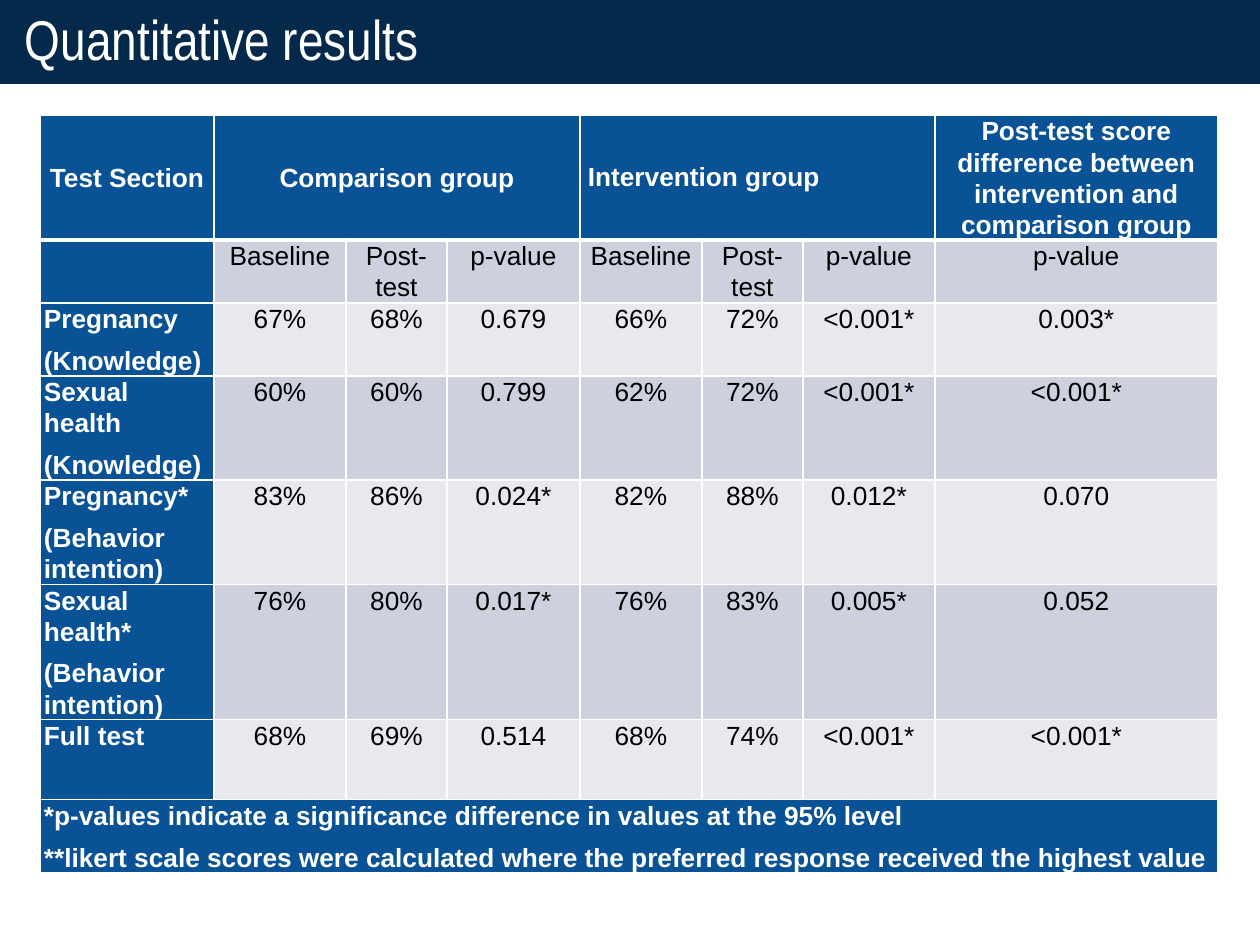
import lxml.etree
import pptx
import pptx.dml.color
import pptx.enum.shapes
import pptx.enum.text
import pptx.oxml.ns
import pptx.util

RGBColor = pptx.dml.color.RGBColor
PP_ALIGN = pptx.enum.text.PP_ALIGN
MSO_ANCHOR = pptx.enum.text.MSO_ANCHOR

NAVY = RGBColor(0x04, 0x29, 0x4A)
BLUE = RGBColor(0x08, 0x52, 0x95)
DARK_BAND = RGBColor(0xCC, 0xD1, 0xDD)
LIGHT_BAND = RGBColor(0xE7, 0xE9, 0xEF)
WHITE = RGBColor(0xFF, 0xFF, 0xFF)
BLACK = RGBColor(0x00, 0x00, 0x00)

TITLE = "Quantitative results"
# Header entries: first column, columns spanned, text
HEADERS = [
    (0, 1, "Test Section"),
    (1, 3, "Comparison group"),
    (4, 3, "Intervention group"),
    (7, 1, "Post-test score difference between intervention and comparison group"),
]
# Row label paragraphs, then one value per column
ROWS = [
    ([], ["Baseline", "Post-test", "p-value", "Baseline", "Post-test", "p-value", "p-value"]),
    (["Pregnancy", "(Knowledge)"],
     ["67%", "68%", "0.679", "66%", "72%", "<0.001*", "0.003*"]),
    (["Sexual health", "(Knowledge)"],
     ["60%", "60%", "0.799", "62%", "72%", "<0.001*", "<0.001*"]),
    (["Pregnancy*", "(Behavior intention)"],
     ["83%", "86%", "0.024*", "82%", "88%", "0.012*", "0.070"]),
    (["Sexual health*", "(Behavior intention)"],
     ["76%", "80%", "0.017*", "76%", "83%", "0.005*", "0.052"]),
    (["Full test"],
     ["68%", "69%", "0.514", "68%", "74%", "<0.001*", "<0.001*"]),
]
NOTES = [
    "*p-values indicate a significance difference in values at the 95% level",
    "**likert scale scores were calculated where the preferred response received the highest value",
]

EMU_PER_PX = 914400 / 126
SLIDE_W, SLIDE_H = 1260, 945
TITLE_H = 84
TABLE_LEFT, TABLE_TOP = 40, 115
COL_WIDTHS = [174, 132, 101, 133, 122, 101, 132, 283]
ROW_HEIGHTS = [125, 63, 73, 104, 104, 135, 80, 73]


def px(n):
    return pptx.util.Emu(round(n * EMU_PER_PX))


def add_run(p, text, size, font, color, bold=False):
    r = p.add_run()
    r.text = text
    r.font.size = pptx.util.Pt(size)
    r.font.name = font
    r.font.bold = bold
    r.font.color.rgb = color


def set_borders(cell, top, bottom):
    """Give a cell white borders; top and bottom are widths in points."""
    tc_pr = cell._tc.get_or_add_tcPr()
    sides = [("lnL", 1), ("lnR", 1), ("lnT", top), ("lnB", bottom)]
    for i, (side, width) in enumerate(sides):
        ln = lxml.etree.Element(pptx.oxml.ns.qn(f"a:{side}"), w=str(pptx.util.Pt(width)))
        fill = lxml.etree.SubElement(ln, pptx.oxml.ns.qn("a:solidFill"))
        lxml.etree.SubElement(fill, pptx.oxml.ns.qn("a:srgbClr"), val=str(WHITE))
        tc_pr.insert(i, ln)


def write_cell(cell, paragraphs, color, bold, align, spaced=True):
    tf = cell.text_frame
    for i, text in enumerate(paragraphs):
        p = tf.add_paragraph() if i else tf.paragraphs[0]
        p.alignment = align
        if spaced:
            p.line_spacing = 1.07
            p.space_before = p.space_after = pptx.util.Pt(3)
        add_run(p, text, 15, "Arial", color, bold)


def add_title(slide):
    sp = slide.shapes.add_shape(
        pptx.enum.shapes.MSO_SHAPE.RECTANGLE, 0, 0, px(SLIDE_W), px(TITLE_H))
    sp.shadow.inherit = False
    sp.fill.solid()
    sp.fill.fore_color.rgb = NAVY
    sp.line.fill.background()
    tf = sp.text_frame
    tf.word_wrap = True
    tf.vertical_anchor = MSO_ANCHOR.MIDDLE
    tf.margin_left = tf.margin_right = px(25)
    tf.margin_top = tf.margin_bottom = px(13)
    p = tf.paragraphs[0]
    p.alignment = PP_ALIGN.LEFT
    p.line_spacing = 0.9
    add_run(p, TITLE, 32, "Arial Narrow", WHITE)


def style_cell(cell, row, col):
    last = len(ROW_HEIGHTS) - 1
    cell.margin_left = cell.margin_right = px(4 if col < 2 else 8)
    cell.margin_top = cell.margin_bottom = 0
    cell.fill.solid()
    if row in (0, last) or col == 0:
        cell.fill.fore_color.rgb = BLUE
    else:
        cell.fill.fore_color.rgb = DARK_BAND if row % 2 else LIGHT_BAND
    set_borders(cell, top=3 if row == 1 else 1, bottom=3 if row == 0 else 1)


def add_results_table(slide):
    n_rows, n_cols = len(ROW_HEIGHTS), len(COL_WIDTHS)
    table = slide.shapes.add_table(
        n_rows, n_cols, px(TABLE_LEFT), px(TABLE_TOP),
        px(sum(COL_WIDTHS)), px(sum(ROW_HEIGHTS))).table
    table.horz_banding = False
    for column, width in zip(table.columns, COL_WIDTHS):
        column.width = px(width)
    for row, height in zip(table.rows, ROW_HEIGHTS):
        row.height = px(height)
    for r in range(n_rows):
        for c in range(n_cols):
            style_cell(table.cell(r, c), r, c)

    for col, span, text in HEADERS:
        cell = table.cell(0, col)
        if span > 1:
            cell.merge(table.cell(0, col + span - 1))
        cell.vertical_anchor = MSO_ANCHOR.MIDDLE
        left = text == "Intervention group"
        write_cell(cell, [text], WHITE, True,
                   PP_ALIGN.LEFT if left else PP_ALIGN.CENTER, spaced=not left)

    for r, (label, values) in enumerate(ROWS, start=1):
        write_cell(table.cell(r, 0), label, WHITE, True, PP_ALIGN.LEFT)
        for c, value in enumerate(values, start=1):
            write_cell(table.cell(r, c), [value], BLACK, False, PP_ALIGN.CENTER)

    notes = table.cell(n_rows - 1, 0)
    notes.merge(table.cell(n_rows - 1, n_cols - 1))
    write_cell(notes, NOTES, WHITE, True, PP_ALIGN.LEFT)


def main():
    prs = pptx.Presentation()
    prs.slide_width, prs.slide_height = px(SLIDE_W), px(SLIDE_H)
    slide = prs.slides.add_slide(prs.slide_layouts[6])
    add_title(slide)
    add_results_table(slide)
    prs.save("out.pptx")


if __name__ == "__main__":
    main()
